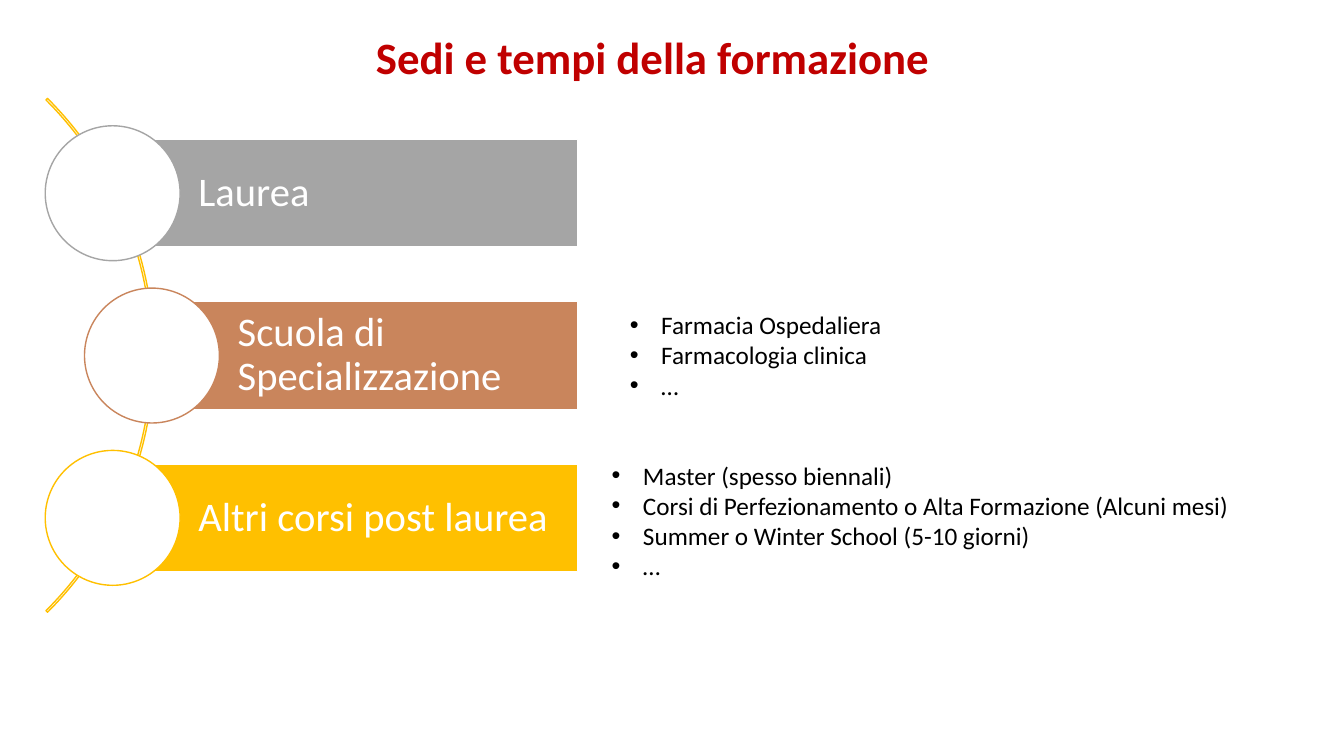
import pptx
import pptx.dml.color
import pptx.enum.shapes
import pptx.enum.text
import pptx.oxml
import pptx.oxml.ns
import pptx.util

Cm = pptx.util.Cm
Pt = pptx.util.Pt
Kind = pptx.enum.shapes.MSO_SHAPE
Align = pptx.enum.text.PP_ALIGN
Anchor = pptx.enum.text.MSO_ANCHOR
Fit = pptx.enum.text.MSO_AUTO_SIZE

theme = {
    "font": "Calibri",
    "title": "C00000",
    "text": "000000",
    "white": "FFFFFF",
    "grey": "A5A5A5",
    "clay": "C9855C",
    "gold": "FFC000",
    "head": 32,
    "bar": 29,
    "list": 18,
}


def draw(kind, box, fill, line):
    shape = slide.shapes.add_shape(kind, *[Cm(n) for n in box])
    shape.shadow.inherit = False
    if fill:
        shape.fill.solid()
        shape.fill.fore_color.rgb = pptx.dml.color.RGBColor.from_string(theme[fill])
    else:
        shape.fill.background()
    shape.line.color.rgb = pptx.dml.color.RGBColor.from_string(theme[line])
    shape.line.width = Pt(1)
    return shape


def style(para, size, color, bold=False):
    for run in para.runs:
        run.font.name = theme["font"]
        run.font.size = Pt(theme[size])
        run.font.bold = bold
        run.font.color.rgb = pptx.dml.color.RGBColor.from_string(theme[color])


deck = pptx.Presentation()
deck.slide_width = Cm(33.87)
deck.slide_height = Cm(19.05)
slide = deck.slides.add_slide(deck.slide_layouts[3])
title, upper, lower = slide.placeholders

title.left, title.top, title.width, title.height = Cm(8.18), Cm(0.61), Cm(16.54), Cm(1.63)
title.text_frame.text = "Sedi e tempi della formazione"
title.text_frame.auto_size = Fit.NONE
title.text_frame.vertical_anchor = Anchor.MIDDLE
title.text_frame.paragraphs[0].alignment = Align.CENTER
style(title.text_frame.paragraphs[0], "head", "title", True)

arc = draw(Kind.BLOCK_ARC, (-14.43, -0.2, 18.31, 18.31), None, "gold")
for index, value in enumerate((189, 27, 0.003)):
    arc.adjustments[index] = value

size, tall, step, right = 3.4, 2.71, 4.09, 14.55
steps = [
    ("Laurea", 1.14, "grey"),
    ("Scuola di Specializzazione", 2.13, "clay"),
    ("Altri corsi post laurea", 1.14, "gold"),
]
for row, (label, left, color) in enumerate(steps):
    mid = 4.87 + row * step
    start = left + size / 2
    bar = draw(Kind.RECTANGLE, (start, mid - tall / 2, right - start, tall), color, "white")
    frame = bar.text_frame
    frame.text = label
    frame.word_wrap = True
    frame.vertical_anchor = Anchor.MIDDLE
    frame.margin_left = Cm(2.16)
    frame.margin_right = frame.margin_top = frame.margin_bottom = Cm(0.2)
    para = frame.paragraphs[0]
    para.alignment = Align.LEFT
    para.line_spacing = 0.9
    style(para, "bar", "white")
    draw(Kind.OVAL, (left, mid - size / 2, size, size), "white", color)

lists = [
    (upper, (15.62, 7.67, 10.34, 2.57), ["Farmacia Ospedaliera", "Farmacologia clinica", "…"]),
    (lower, (15.16, 11.46, 16.54, 3.33), [
        "Master (spesso biennali)",
        "Corsi di Perfezionamento o Alta Formazione (Alcuni mesi)",
        "Summer o Winter School (5-10 giorni)",
        "…",
    ]),
]
for body, box, items in lists:
    body.left, body.top, body.width, body.height = [Cm(n) for n in box]
    frame = body.text_frame
    frame.text = "\n".join(items)
    frame.auto_size = Fit.NONE
    frame.vertical_anchor = Anchor.TOP
    for para in frame.paragraphs:
        props = para._p.get_or_add_pPr()
        props.set("marL", str(Cm(0.79)))
        props.set("indent", str(-Cm(0.79)))
        for tag, key, value in (("buFont", "typeface", "Arial"), ("buChar", "char", "•")):
            mark = pptx.oxml.parse_xml(f'<a:{tag} {pptx.oxml.ns.nsdecls("a")} {key}="{value}"/>')
            props.append(mark)
        para.space_before = Pt(0)
        style(para, "list", "text")

deck.save("out.pptx")
